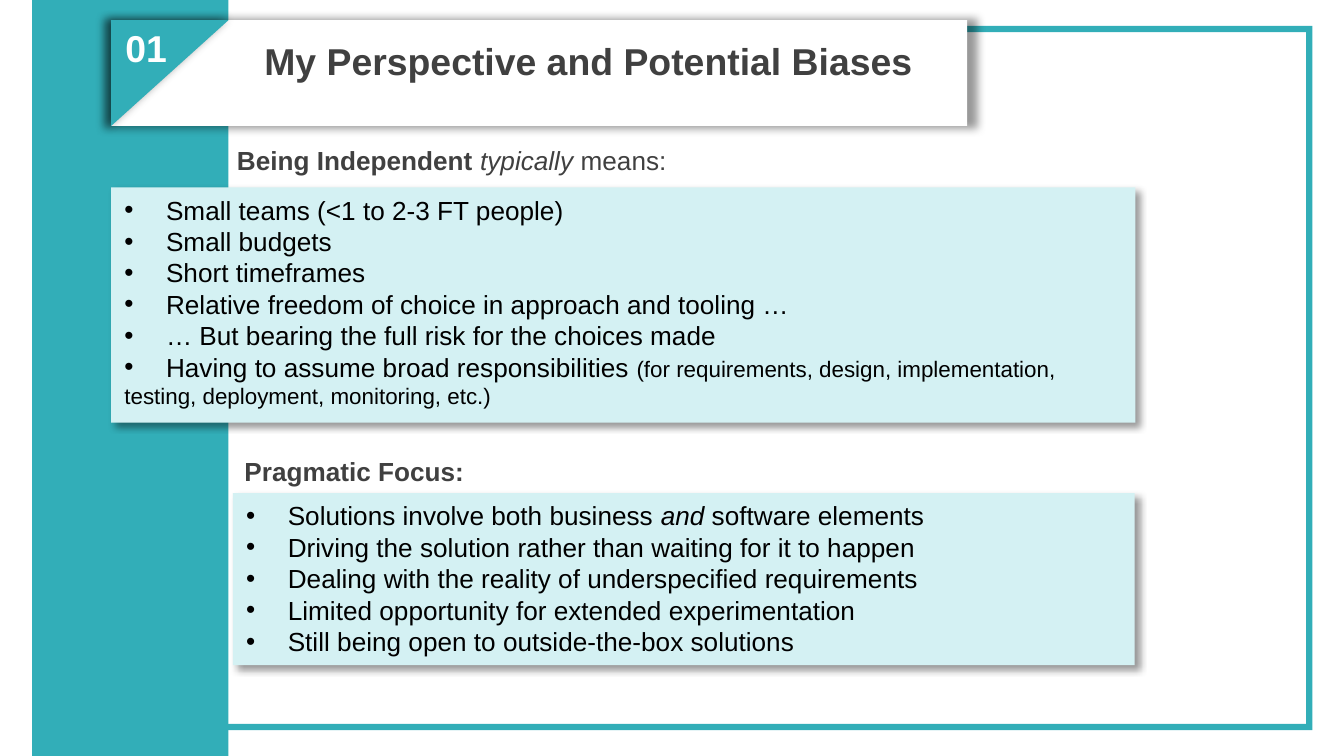
from dataclasses import dataclass

from lxml import etree
from pptx import Presentation
from pptx import util as u
from pptx.dml.color import RGBColor
from pptx.enum import shapes, text
from pptx.oxml.ns import qn


@dataclass(frozen=True)
class Theme:
    teal: str = "32AEB8"
    pale: str = "D4F1F3"
    white: str = "FFFFFF"
    black: str = "000000"
    grey: str = "404040"
    font: str = "Arial"
    title: float = 20
    body: float = 14
    aside: float = 12


THEME = Theme()
WIDTH = u.Inches(10)
HEIGHT = WIDTH * 9 // 16
SHARE = WIDTH / 100
BOTTOM = 100 * HEIGHT / WIDTH
BAND = (2.4, 14.6)
EDGE = 8.27
BANNER_TOP, BANNER_HEIGHT = 1.5, 7.87
BULLET_INDENT = u.Inches(0.31)
PANEL_SHADOW = {"blurRad": u.Pt(4), "dist": u.Pt(3), "dir": 45 * 60000, "algn": "tl"}
BANNER_SHADOW = {"blurRad": u.Pt(5), "sx": 102000, "sy": 102000, "algn": "ctr"}

INDEPENDENT = [
    ["Small teams (<1 to 2-3 FT people)"],
    ["Small budgets"],
    ["Short timeframes"],
    ["Relative freedom of choice in approach and tooling …"],
    ["… But bearing the full risk for the choices made"],
    ["Having to assume broad responsibilities ",
     ("(for requirements, design, implementation,", {"size": u.Pt(THEME.aside)})],
]
INDEPENDENT_REST = [[("testing, deployment, monitoring, etc.)", {"size": u.Pt(THEME.aside)})]]
PRAGMATIC = [
    ["Solutions involve both business ", ("and", {"italic": True}), " software elements"],
    ["Driving the solution rather than waiting for it to happen"],
    ["Dealing with the reality of underspecified requirements"],
    ["Limited opportunity for extended experimentation"],
    ["Still being open to outside-the-box solutions"],
]


def apply(target, values):
    for name, value in values.items():
        setattr(target, name, value)


def shares(*lengths):
    return [round(length * SHARE) for length in lengths]


def add_shadow(shape, values):
    effects = shape._element.spPr.find(qn("a:effectLst"))
    outer = etree.SubElement(effects, qn("a:outerShdw"), rotWithShape="0")
    for name, value in values.items():
        outer.set(name, str(value))
    colour = etree.SubElement(outer, qn("a:srgbClr"), val=THEME.black)
    etree.SubElement(colour, qn("a:alpha"), val="40000")


def add_block(slide, kind, place, fill, shadow=None):
    block = slide.shapes.add_shape(kind, *shares(*place))
    block.shadow.inherit = False
    block.fill.solid()
    block.fill.fore_color.rgb = RGBColor.from_string(fill)
    block.line.fill.background()
    if shadow:
        add_shadow(block, shadow)
    return block


def add_bullet(paragraph):
    properties = paragraph._p.get_or_add_pPr()
    properties.set("marL", str(BULLET_INDENT))
    properties.set("indent", str(-BULLET_INDENT))
    etree.SubElement(properties, qn("a:buFont"), typeface=THEME.font)
    etree.SubElement(properties, qn("a:buChar"), char="•")


def write(frame, lines, colour, style, align=text.PP_ALIGN.LEFT, bullets=0):
    apply(frame, {"word_wrap": True, "vertical_anchor": text.MSO_ANCHOR.TOP})
    for index, line in enumerate(lines):
        paragraph = frame.add_paragraph() if index else frame.paragraphs[0]
        paragraph.alignment = align
        if index < bullets:
            add_bullet(paragraph)
        for part in line:
            words, emphasis = (part, {}) if isinstance(part, str) else part
            run = paragraph.add_run()
            run.text = words
            apply(run.font, {"name": THEME.font, **style, **emphasis})
            run.font.color.rgb = RGBColor.from_string(colour)


def add_label(slide, place, line, colour, size, align=text.PP_ALIGN.LEFT):
    label = slide.shapes.add_textbox(*shares(*place))
    write(label.text_frame, [line], colour, {"size": u.Pt(size), "bold": True}, align)


def add_panel(slide, place, bulleted, rest=()):
    panel = add_block(slide, shapes.MSO_SHAPE.RECTANGLE, place, THEME.pale, PANEL_SHADOW)
    write(panel.text_frame, [*bulleted, *rest], THEME.black,
          {"size": u.Pt(THEME.body)}, bullets=len(bulleted))


def add_backdrop(slide):
    border = add_block(slide, shapes.MSO_SHAPE.FRAME, (BAND[0], 1.93, 95.25, 52.4), THEME.teal)
    border.adjustments[0] = 0.009
    add_block(slide, shapes.MSO_SHAPE.RECTANGLE, (BAND[0], 0, BAND[1], BOTTOM), THEME.teal)


def add_banner(slide, number, title):
    add_block(slide, shapes.MSO_SHAPE.RECTANGLE, (EDGE, BANNER_TOP, 63.7, BANNER_HEIGHT),
              THEME.white, BANNER_SHADOW)
    corner_width = sum(BAND) - EDGE
    shift = (corner_width - BANNER_HEIGHT) / 2
    corner = add_block(slide, shapes.MSO_SHAPE.RIGHT_TRIANGLE,
                       (EDGE + shift, BANNER_TOP - shift, BANNER_HEIGHT, corner_width),
                       THEME.teal, BANNER_SHADOW)
    corner.rotation = 90
    add_label(slide, (8.35, 1.4, 6.5, 4.4), [number], THEME.white, THEME.title)
    add_label(slide, (17.2, 2.35, 53.2, 4.4), [title], THEME.grey, THEME.title,
              text.PP_ALIGN.CENTER)


def main():
    deck = Presentation()
    apply(deck, {"slide_width": WIDTH, "slide_height": HEIGHT})
    slide = deck.slides.add_slide(deck.slide_layouts[6])
    add_backdrop(slide)
    add_panel(slide, (EDGE, 13.95, 76.2, 17.5), INDEPENDENT, INDEPENDENT_REST)
    plain = {"bold": False}
    add_label(slide, (16.65, 10.25, 67.1, 3.4),
              ["Being Independent ", ("typically", {**plain, "italic": True}), (" means:", plain)],
              THEME.grey, THEME.body)
    add_panel(slide, (17.33, 36.7, 67.1, 12.8), PRAGMATIC)
    add_label(slide, (17.2, 33.4, 67.1, 3.4), ["Pragmatic Focus:"], THEME.grey, THEME.body)
    add_banner(slide, "01", "My Perspective and Potential Biases")
    deck.save("out.pptx")


if __name__ == "__main__":
    main()
